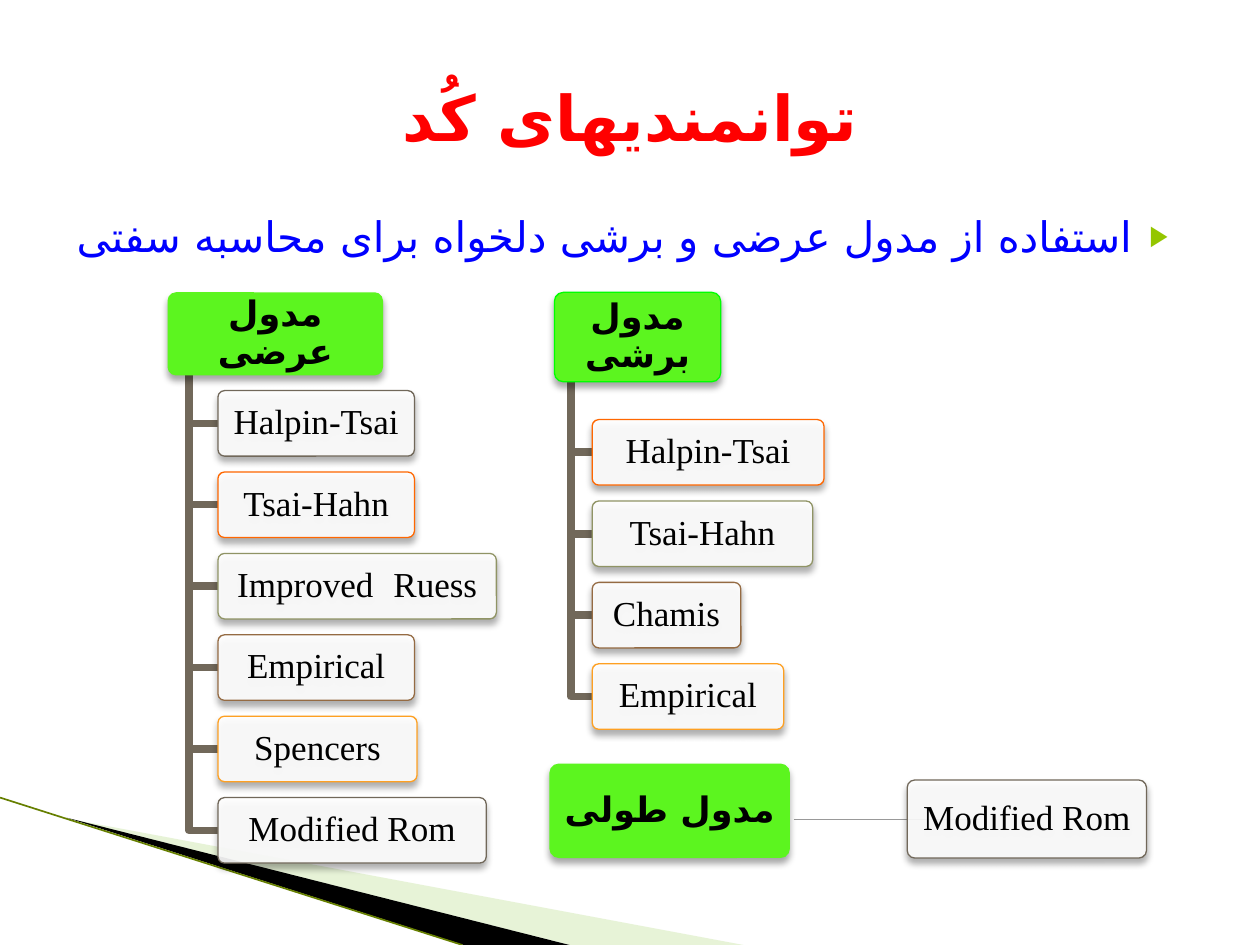
"""Build a slide of modulus models as two trees and one linked pair."""
from lxml.etree import SubElement
from pptx import Presentation
from pptx.dml.color import RGBColor
from pptx.enum.shapes import MSO_CONNECTOR, MSO_SHAPE
from pptx.enum.text import MSO_ANCHOR, PP_ALIGN
from pptx.oxml.ns import qn
from pptx.util import Inches, Pt


def paint(fill, color, opacity=100):
    fill.solid()
    fill.fore_color.rgb = RGBColor.from_string(color)
    if opacity < 100:
        tint = next(fill._xPr.iter(qn("a:srgbClr")))
        SubElement(tint, qn("a:alpha"), val=str(opacity * 1000))


def write(frame, spans, typeface, size, color, bold=False, rtl=True):
    para = frame.paragraphs[0]
    para.alignment = PP_ALIGN.CENTER
    para._p.get_or_add_pPr().set("rtl", str(int(rtl)))
    for words in spans:
        span = para.add_run()
        span.text = words
        gap = words == " "
        look = {"name": "Courier New" if gap else typeface, "size": Pt(19 if gap else size), "bold": bold}
        for key, value in look.items():
            setattr(span.font, key, value)
        paint(span.font.fill, color)
        SubElement(span._r.get_or_add_rPr(), qn("a:cs"), typeface="DejaVu Sans")
    return para


deck = Presentation()
deck.slide_width, deck.slide_height = Inches(10), Inches(7.5)
column, row = deck.slide_width // 100, deck.slide_height // 75
page = deck.slides.add_slide(deck.slide_layouts[1])
title, body = page.shapes.title, page.placeholders[1]

for holder, top, height in ((title, 3, 12.5), (body, 16.2, 49.5)):
    place = {"left": 5 * column, "top": int(top * row), "width": 90 * column, "height": int(height * row)}
    for key, value in place.items():
        setattr(holder, key, value)
title.text_frame.vertical_anchor = MSO_ANCHOR.MIDDLE
write(title.text_frame, ["توانمندیهای کُد"], "Courier New", 36, "FF0000", True, False)

props = body.text_frame.paragraphs[0]._p.get_or_add_pPr()
props.set("marL", str(4 * column))
props.set("indent", str(int(-2.8 * column)))
bullet_color = SubElement(props, qn("a:buClr"))
SubElement(bullet_color, qn("a:srgbClr"), val="94C600")
SubElement(props, qn("a:buSzPct"), val="68000")
SubElement(props, qn("a:buChar"), char="▶")
para = write(body.text_frame, ["استفاده از مدول عرضی و برشی دلخواه برای محاسبه سفتی"],
             "Courier New", 24, "0000FF")
para.space_before = Pt(0)

wedges = (
    ("C3E19D", 40, ((5.5, 65), (59, 75), (45.2, 75))),
    ("000000", 100, ((5.3, 64.9), (45.2, 75), (36.8, 75))),
)
for color, opacity, corners in wedges:
    points = [(x * column, y * row) for x, y in corners]
    builder = page.shapes.build_freeform(*points[0])
    builder.add_line_segments(points[1:], close=True)
    wedge = builder.convert_to_shape()
    wedge.shadow.inherit = False
    paint(wedge.fill, color, opacity)
    wedge.line.fill.background()

rules = ((0, 63.3, 36.7, 75, "667F00", 0.95), (63, 65, 77.8, 65, "999999", 0.5))
for left, top, right, bottom, color, weight in rules:
    rule = page.shapes.add_connector(MSO_CONNECTOR.STRAIGHT, int(left * column), int(top * row),
                                     int(right * column), int(bottom * row))
    paint(rule.line.fill, color)
    rule.line.width = Pt(weight)
    SubElement(rule._element.spPr, qn("a:effectLst"))

GREEN, BROWN, ORANGE, OLIVE, TAN, GOLD = "5CF51F", "71685A", "FF6700", "909465", "956B43", "FEA022"
cards = [
    ("مدول عرضی", 13.3, 23.2, 17.1, 6.6, GREEN, None),
    ("مدول برشی", 44, 23.2, 13.2, 7.1, GREEN, "00FF00"),
    ("مدول طولی", 43.6, 60.6, 19.1, 7.5, GREEN, None),
    ("Modified Rom", 72, 61.9, 19, 6.2, "FFFFFF", BROWN),
]
trees = (
    (15, 29.8, 17.3, 31, (
        ("Halpin-Tsai", 15.6, BROWN), ("Tsai-Hahn", 15.6, ORANGE), ("Improved| |Ruess", 22.1, OLIVE),
        ("Empirical", 15.6, TAN), ("Spencers", 15.8, GOLD), ("Modified Rom", 21.3, BROWN))),
    (45.3, 30.3, 47, 33.3, (
        ("Halpin-Tsai", 18.4, ORANGE), ("Tsai-Hahn", 17.5, OLIVE),
        ("Chamis", 11.8, TAN), ("Empirical", 15.2, GOLD))),
)
leaf_height, leaf_pitch = 5.2, 6.46
for trunk, trunk_top, leaf_left, first_top, leaves in trees:
    for index, (name, width, outline) in enumerate(leaves):
        top = first_top + index * leaf_pitch
        middle = (top + leaf_height / 2) * row
        builder = page.shapes.build_freeform(trunk * column, trunk_top * row)
        builder.add_line_segments([(trunk * column, middle), (leaf_left * column, middle)], close=False)
        branch = builder.convert_to_shape()
        branch.shadow.inherit = False
        branch.fill.background()
        paint(branch.line.fill, BROWN)
        branch.line.width = Pt(4.33)
        cards.append((name, leaf_left, top, width, leaf_height, "FFFFFF", outline))

for name, left, top, width, height, color, outline in cards:
    heading = color == GREEN
    card = page.shapes.add_shape(MSO_SHAPE.ROUNDED_RECTANGLE, int(left * column), int(top * row),
                                 int(width * column), int(height * row))
    card.adjustments[0] = 0.1
    card.shadow.inherit = False
    paint(card.fill, color, 100 if heading else 90)
    if outline:
        paint(card.line.fill, outline)
        card.line.width = Pt(0.75)
    else:
        card.line.fill.background()
    effects = card._element.spPr.find(qn("a:effectLst"))
    shadow = SubElement(effects, qn("a:outerShdw"), blurRad=str(Pt(4)), dist=str(Pt(3)),
                        dir="5400000", rotWithShape="0")
    shade = SubElement(shadow, qn("a:srgbClr"), val="000000")
    SubElement(shade, qn("a:alpha"), val="35000")
    frame_look = {"word_wrap": True, "vertical_anchor": MSO_ANCHOR.MIDDLE,
                  "margin_left": Inches(0.06), "margin_right": Inches(0.06),
                  "margin_top": Inches(0.05), "margin_bottom": Inches(0.05)}
    for key, value in frame_look.items():
        setattr(card.text_frame, key, value)
    para = write(card.text_frame, name.split("|"), "Times New Roman", 20, "000000", heading)
    para.line_spacing = 0.9

deck.save("out.pptx")
